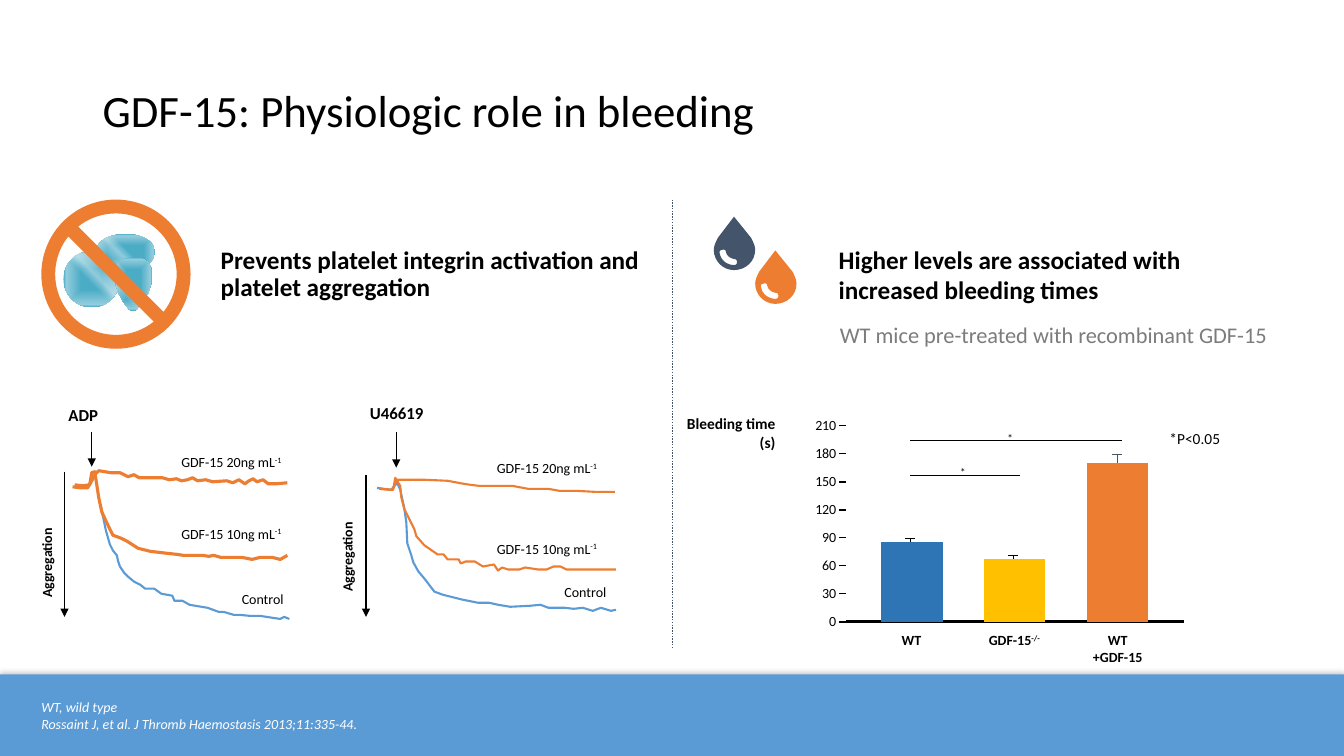
from lxml import etree
from pptx import Presentation
from pptx import util as u
from pptx.chart.data import CategoryChartData
from pptx.dml.color import RGBColor
from pptx.enum import chart as charts, dml, shapes, text
from pptx.oxml import parse_xml
from pptx.oxml.ns import nsdecls, qn

PX = 9144  # 100 px to the inch
FONT = "Calibri"
BLACK, WHITE, NAVY, ORANGE, BLUE = "000000", "FFFFFF", "44546A", "ED7D31", "5B9BD5"
LEFT, CENTER, RIGHT = text.PP_ALIGN.LEFT, text.PP_ALIGN.CENTER, text.PP_ALIGN.RIGHT
colour = RGBColor.from_string

deck = Presentation()
deck.slide_width, deck.slide_height = 1333 * PX, 750 * PX
page = deck.slides.add_slide(deck.slide_layouts[6])


def add_label(x, y, w, h, words, size, bold=False, color=BLACK, align=LEFT, wrap=False,
              middle=False, raised="", turn=0, spacing=None, italic=False, inset=10):
    """Add a text box; raised is a superscript after the words."""
    box = page.shapes.add_textbox(x * PX, y * PX, w * PX, h * PX)
    box.rotation = turn
    frame = box.text_frame
    frame.word_wrap = wrap
    frame.margin_left = inset * PX
    frame.vertical_anchor = text.MSO_ANCHOR.MIDDLE if middle else text.MSO_ANCHOR.TOP
    frame.text = words
    for para in frame.paragraphs:
        para.alignment, para.line_spacing = align, spacing
        font = para.font
        font.name, font.size, font.bold, font.italic = FONT, u.Pt(size), bold, italic
        font.color.rgb = colour(color)
    if raised:
        span = frame.paragraphs[-1].add_run()
        span.text = raised
        span._r.get_or_add_rPr().set("baseline", "30000")


def add_outline(contours, curved):
    """Add a closed shape from cubic Bezier points, or an open line from plain points."""
    builder = None
    for points in contours:
        if curved:
            corners, points = points, points[:1]
            for i in range(0, len(corners) - 1, 3):
                for t in (step / 8 for step in range(1, 9)):
                    weights = ((1 - t) ** 3, 3 * t * (1 - t) ** 2, 3 * t * t * (1 - t), t ** 3)
                    points = points + [tuple(sum(k * p[axis] for k, p in zip(weights, corners[i:i + 4]))
                                             for axis in (0, 1))]
        fine = [(round(x * 100), round(y * 100)) for x, y in points]
        if builder is None:
            builder = page.shapes.build_freeform(*fine[0], scale=PX / 100)
        else:
            builder.move_to(*fine[0])
        builder.add_line_segments(fine[1:], close=curved)
    outline = builder.convert_to_shape()
    outline.shadow.inherit = False
    return outline


# Platelets: a body and a gloss on each
body = "".join(f'<a:gs pos="{at}000"><a:srgbClr val="{tint}"/></a:gs>'
               for at, tint in ((37, "4BACC6"), (90, "93CDDD"), (99, "4BACC6")))
gloss = "".join(f'<a:gs pos="{at}000"><a:srgbClr val="{WHITE}"><a:alpha val="{alpha}000"/></a:srgbClr></a:gs>'
                for at, alpha in ((0, 0), (25, 0), (43, 39), (54, 0), (100, 0)))
center = '<a:path path="shape"><a:fillToRect l="50000" t="50000" r="50000" b="50000"/></a:path>'
bean = [(108, 277), (105, 279), (105, 283), (107, 285), (126, 304), (160, 309), (159, 282),
        (159, 255), (127, 260), (108, 277)]
for oval, turn, angle in (((63, 249, 56, 56), 0, 135), ((95, 232, 59, 36), 180, 135), (None, 270, 45)):
    for stops, direction in ((body, center), (gloss, f'<a:lin ang="{angle * 60000}" scaled="0"/>')):
        if oval:
            platelet = page.shapes.add_shape(shapes.MSO_SHAPE.OVAL, *(n * PX for n in oval))
        else:
            platelet = add_outline([bean], True)
        platelet.shadow.inherit = False
        platelet.rotation = turn
        platelet.line.fill.background()
        platelet._element.spPr.find(qn("a:prstGeom" if oval else "a:custGeom")).addnext(parse_xml(
            f'<a:gradFill {nsdecls("a")} rotWithShape="1"><a:gsLst>{stops}</a:gsLst>{direction}</a:gradFill>'))

# Stop sign and footer band
for kind, place, fill in ((shapes.MSO_SHAPE.NO_SYMBOL, (41, 198, 148, 148), ORANGE),
                          (shapes.MSO_SHAPE.RECTANGLE, (0, 669, 1333, 81), BLUE)):
    block = page.shapes.add_shape(kind, *(n * PX for n in place))
    block.shadow.inherit = False
    block.fill.solid()
    block.fill.fore_color.rgb = colour(fill)
    block.line.fill.background()
    if kind == shapes.MSO_SHAPE.NO_SYMBOL:
        block.adjustments[0] = 0.093
    else:
        block._element.spPr.find(qn("a:effectLst")).append(parse_xml(
            f'<a:outerShdw {nsdecls("a")} blurRad="50800" dist="25400" dir="16200000" rotWithShape="0">'
            f'<a:srgbClr val="{BLACK}"><a:alpha val="20000"/></a:srgbClr></a:outerShdw>'))

# Blood drops with a cut-out highlight
highlight = [(728, 263), (721, 263), (715, 258), (714, 252), (713, 250), (714, 248), (716, 248),
             (718, 247), (720, 248), (720, 250), (721, 254), (724, 256), (728, 257),
             (730, 257), (731, 258), (731, 260), (731, 262), (730, 263), (728, 263)]
drop = [(745, 236), (745, 236), (728, 215), (728, 215), (728, 215), (712, 236), (712, 236),
        (710, 240), (708, 244), (708, 248), (708, 259), (717, 268), (728, 268),
        (740, 268), (749, 259), (749, 248), (749, 244), (747, 240), (745, 236)]
for dx, dy, fill in ((0, 0, NAVY), (41, 33.5, ORANGE)):
    blood = add_outline([[(x + dx, y + dy) for x, y in part] for part in (highlight, drop)], True)
    blood.fill.solid()
    blood.fill.fore_color.rgb = colour(fill)
    blood.line.fill.background()

# Aggregation traces
adp_control = [
    (100, 502), (105, 526), (109, 540), (112, 546), (116, 551), (117, 556), (119, 562), (123, 568),
    (127, 572), (133, 577), (139, 580), (144, 584), (153, 584), (160, 589), (171, 591), (173, 596),
    (181, 596), (188, 600), (200, 602), (206, 603), (217, 607), (222, 607), (232, 610), (238, 610),
    (248, 611), (258, 611), (271, 613), (278, 614), (282, 612), (287, 614)]
adp_20ng = [
    (72, 483), (80, 484), (87, 484), (95, 470), (98, 467), (110, 469), (119, 469), (127, 473),
    (133, 471), (138, 474), (161, 474), (168, 476), (175, 475), (180, 477), (186, 476), (191, 474),
    (196, 477), (204, 476), (211, 478), (225, 477), (231, 479), (237, 476), (243, 480), (247, 477),
    (251, 475), (255, 478), (261, 476), (266, 480), (274, 480), (285, 479)]
adp_10ng = [
    (74, 481), (82, 482), (89, 481), (91, 469), (94, 468), (98, 494), (101, 508), (108, 523),
    (112, 531), (120, 534), (126, 537), (137, 544), (149, 547), (166, 549), (175, 550), (182, 551),
    (201, 551), (207, 552), (212, 551), (219, 553), (240, 553), (250, 555), (258, 553), (270, 553),
    (278, 555), (285, 551)]
u46619_control = [
    (374, 484), (388, 486), (394, 479), (397, 486), (401, 504), (403, 518), (404, 539), (408, 551),
    (410, 558), (415, 567), (421, 574), (427, 582), (431, 587), (439, 590), (459, 595), (474, 598),
    (485, 598), (494, 600), (506, 602), (526, 601), (536, 600), (544, 603), (560, 603), (569, 604),
    (578, 603), (588, 606), (596, 603), (606, 606), (611, 605)]
u46619_20ng = [
    (376, 485), (389, 486), (394, 476), (422, 476), (444, 477), (460, 480), (467, 481), (475, 482),
    (508, 482), (524, 485), (544, 485), (555, 487), (572, 487), (591, 488), (610, 488)]
u46619_10ng = [
    (377, 485), (390, 486), (392, 474), (397, 482), (398, 493), (401, 505), (406, 515), (411, 525),
    (413, 532), (421, 541), (434, 550), (440, 550), (444, 555), (455, 555), (457, 559), (462, 557),
    (471, 557), (479, 562), (490, 560), (494, 566), (498, 563), (504, 565), (515, 565), (521, 563),
    (534, 565), (542, 565), (549, 562), (556, 562), (562, 565), (611, 565)]
for points, color, width in ((adp_control, BLUE, 1.5), (adp_20ng, ORANGE, 2.25), (adp_10ng, ORANGE, 2.25),
                             (u46619_control, BLUE, 1.5), (u46619_20ng, ORANGE, 1.5),
                             (u46619_10ng, ORANGE, 1.5)):
    trace = add_outline([points], False)
    trace.fill.background()
    trace.line.color.rgb, trace.line.width = colour(color), u.Pt(width)

# Bleeding time chart: one group of three bars
data = CategoryChartData()
data.categories = ["Bleeding time (s)"]
bars = (("WT", 85, "2E75B6"), ("GDF-15-/-", 67, "FFC000"), ("WT +GDF-15", 170, ORANGE))
for name, seconds, _ in bars:
    data.add_series(name, [seconds])
chart = page.shapes.add_chart(charts.XL_CHART_TYPE.COLUMN_CLUSTERED, 784 * PX, 402 * PX,
                              400 * PX, 225 * PX, data).chart
chart.has_legend = chart.has_title = False
chart.font.name, chart.font.size, chart.font.color.rgb = FONT, u.Pt(10), colour(BLACK)
plot = chart.plots[0]
plot.gap_width, plot.overlap, plot.vary_by_categories = 115, -67, False
for series, (_, _, fill) in zip(plot.series, bars):
    series.format.fill.solid()
    series.format.fill.fore_color.rgb = colour(fill)
scale, base = chart.value_axis, chart.category_axis
scale.minimum_scale, scale.maximum_scale, scale.major_unit = 0, 210, 30
scale.has_major_gridlines = False
scale.format.line.fill.background()
base.tick_label_position = charts.XL_TICK_LABEL_POSITION.NONE
base.major_tick_mark = charts.XL_TICK_MARK.NONE
base.format.line.color.rgb, base.format.line.width = colour(BLACK), u.Pt(2)
area = chart._chartSpace.chart.plotArea
for old in area.findall(qn("c:layout")):
    area.remove(old)
area.insert(0, parse_xml(
    f'<c:layout {nsdecls("c")}><c:manualLayout><c:layoutTarget val="inner"/><c:xMode val="edge"/>'
    f'<c:yMode val="edge"/><c:x val="{55 / 400}"/><c:y val="{20 / 225}"/><c:w val="{335 / 400}"/>'
    f'<c:h val="{195 / 225}"/></c:manualLayout></c:layout>'))

# Arrows, significance brackets, divider, scale ticks and error whiskers
lines = [(91, 429, 91, 463, "arrow"), (64, 468, 64, 612, "arrow"), (393, 429, 393, 464, "arrow"),
         (363, 471, 363, 612, "arrow"), (903, 437, 1113, 437, ""), (903, 472, 1012, 472, ""),
         (667, 198, 667, 644, "dots")]
lines += [(832, round(422 + i * 195 / 7), 839, round(422 + i * 195 / 7), "") for i in range(8)]
for x, top, bar_top, style in ((903, 534, 538, "thin"), (1005, 551, 555, "thin"),
                               (1108, 451, 459, "thin navy")):
    lines += [(x, top, x, bar_top, style), (x - 5, top, x + 5, top, style)]
for x1, y1, x2, y2, style in lines:
    line = page.shapes.add_connector(shapes.MSO_CONNECTOR.STRAIGHT, x1 * PX, y1 * PX, x2 * PX, y2 * PX)
    line.line.color.rgb = colour(NAVY if style in ("dots", "thin navy") else BLACK)
    line.line.width = u.Pt(0.75 if style.startswith("thin") else 1)
    if style == "dots":
        line.line.dash_style = dml.MSO_LINE.ROUND_DOT
    if style == "arrow":
        etree.SubElement(line.line._get_or_add_ln(), qn("a:tailEnd"), type="triangle")
    etree.SubElement(line._element.spPr, qn("a:effectLst"))

# Wording
add_label(92, 40, 1150, 145, "GDF-15: Physiologic role in bleeding", 32, wrap=True, middle=True, spacing=0.9)
add_label(209, 218, 447, 109, "Prevents platelet integrin activation and platelet aggregation", 18,
          bold=True, wrap=True, middle=True, spacing=0.9)
add_label(822, 237, 449, 71, "Higher levels are associated with increased bleeding times", 18,
          bold=True, wrap=True)
add_label(833, 314, 483, 37, "WT mice pre-treated with recombinant GDF-15", 16, color="7C7C7C",
          wrap=True, inset=0)
add_label(671, 406, 108, 47, "Bleeding time (s)", 11, bold=True, align=RIGHT, wrap=True)
add_label(1150, 421, 94, 29, "*P<0.05", 11)
for x, y in ((987, 423), (940, 457)):
    add_label(x, y, 30, 24, "*", 8, align=CENTER)
for x, w, h, words, raised in ((878, 52, 27, "WT", ""), (957, 98, 27, "GDF-15", "-/-"),
                               (1059, 99, 44, "WT\v+GDF-15", "")):
    add_label(x, 622, w, h, words, 10, bold=True, align=CENTER, raised=raised)
for x, y, w, agonist in ((58, 397, 55, "ADP"), (357, 395, 89, "U46619")):
    add_label(x, y, w, 33, agonist, 12, bold=True)
for x, y, w in ((-11, 531, 116), (288, 526, 114)):
    add_label(x, y, w, 28, "Aggregation", 10, bold=True, turn=270)
for x, y, w, dose in ((170, 445, 129, 20), (170, 516, 129, 10), (483, 451, 142, 20), (483, 531, 142, 10)):
    add_label(x, y, w, 29, f"GDF-15 {dose}ng mL", 10, raised="-1")
for x, y, w in ((230, 581, 63), (550, 574, 69)):
    add_label(x, y, w, 29, "Control", 10)
add_label(41, 693, 1252, 34, "WT, wild type\nRossaint J, et al. J Thromb Haemostasis 2013;11:335-44.", 10,
          color=WHITE, italic=True, wrap=True, middle=True, inset=0)

deck.save("out.pptx")
